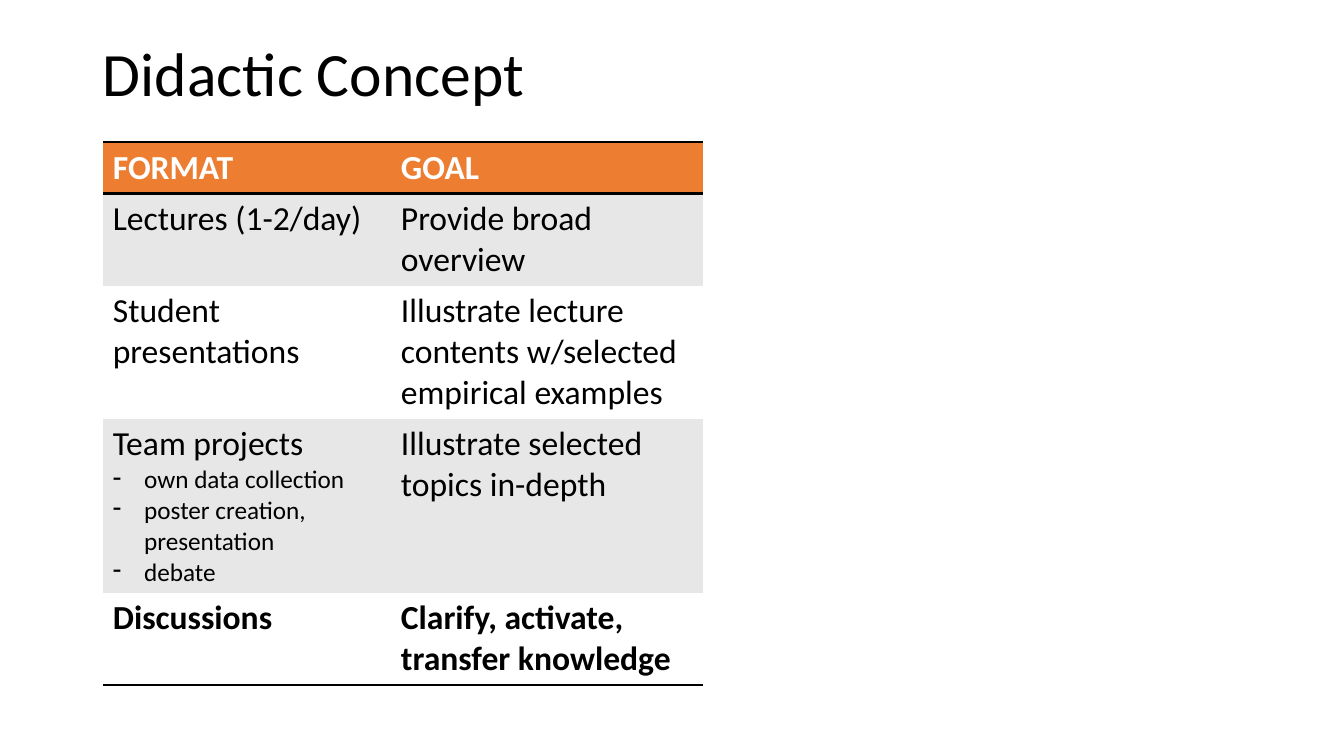
from dataclasses import dataclass

from lxml import etree
from pptx import Presentation
from pptx.dml.color import RGBColor
from pptx.enum.text import MSO_ANCHOR, MSO_AUTO_SIZE, PP_ALIGN
from pptx.oxml.ns import qn
from pptx.util import Cm, Pt

LEFT = PP_ALIGN.LEFT
MIDDLE = MSO_ANCHOR.MIDDLE
NO_AUTOFIT = MSO_AUTO_SIZE.NONE

BLACK = RGBColor(0x00, 0x00, 0x00)
WHITE = RGBColor(0xFF, 0xFF, 0xFF)
ORANGE = RGBColor(0xED, 0x7D, 0x31)
GREY = RGBColor(0xE7, 0xE7, 0xE7)

FONT_NAME = "Calibri"
RULE_WIDTH = Pt(2)
BULLET_INDENT = Cm(0.79)
COLUMN_WIDTHS = (Cm(7.26), Cm(7.87))


@dataclass
class FormatRow:
    teaching_format: str
    goal: str
    height: float
    details: tuple[str, ...] = ()
    bold: bool = False


ROWS = (
    FormatRow("FORMAT", "GOAL", 1.3, bold=True),
    FormatRow("Lectures (1-2/day)", "Provide broad\noverview", 2.32),
    FormatRow("Student presentations",
              "Illustrate lecture contents w/selected empirical examples", 3.35),
    FormatRow("Team projects", "Illustrate selected\ntopics in-depth", 4.38,
              details=("own data collection", "poster creation, presentation", "debate")),
    FormatRow("Discussions", "Clarify, activate,\ntransfer knowledge", 2.32, bold=True),
)


def write_text(paragraph, text: str, size: int, color: RGBColor, bold: bool = False) -> None:
    paragraph.text = text
    font_format = {"name": FONT_NAME, "size": Pt(size), "bold": bold}
    for run in paragraph.runs:
        for attribute, value in font_format.items():
            setattr(run.font, attribute, value)
        run.font.color.rgb = color


def add_dash(paragraph) -> None:
    properties = paragraph._p.get_or_add_pPr()
    properties.set("marL", str(BULLET_INDENT))
    properties.set("indent", str(-BULLET_INDENT))
    etree.SubElement(properties, qn("a:buChar")).set("char", "-")


def set_borders(cell, top: bool, bottom: bool) -> None:
    """Draw the chosen horizontal rules and clear the other edges."""
    properties = cell._tc.get_or_add_tcPr()
    edges = {"a:lnL": False, "a:lnR": False, "a:lnT": top, "a:lnB": bottom}
    for position, (tag, visible) in enumerate(edges.items()):
        line = etree.Element(qn(tag))
        if visible:
            line.set("w", str(RULE_WIDTH))
            fill = etree.SubElement(line, qn("a:solidFill"))
            etree.SubElement(fill, qn("a:srgbClr")).set("val", str(BLACK))
        else:
            etree.SubElement(line, qn("a:noFill"))
        properties.insert(position, line)


def add_title(slide, text: str) -> None:
    title = slide.shapes.title
    place = {"left": Cm(2.34), "top": Cm(0.08), "width": Cm(29.21), "height": Cm(3.68)}
    for attribute, value in place.items():
        setattr(title, attribute, value)
    frame = title.text_frame
    frame.auto_size = NO_AUTOFIT
    frame.vertical_anchor = MIDDLE
    paragraph = frame.paragraphs[0]
    paragraph.alignment = LEFT
    paragraph.line_spacing = 0.9
    write_text(paragraph, text, 44, BLACK)


def add_format_table(slide, rows: tuple[FormatRow, ...]) -> None:
    table = slide.shapes.add_table(
        len(rows), len(COLUMN_WIDTHS), Cm(2.59), Cm(3.58),
        sum(COLUMN_WIDTHS), Cm(sum(row.height for row in rows))).table
    table.horz_banding = False
    for column, width in zip(table.columns, COLUMN_WIDTHS):
        column.width = width

    last = len(rows) - 1
    for index, row in enumerate(rows):
        table.rows[index].height = Cm(row.height)
        header = index == 0
        fill = ORANGE if header else GREY if index % 2 else WHITE
        for column, text in enumerate((row.teaching_format, row.goal)):
            cell = table.cell(index, column)
            cell.fill.solid()
            cell.fill.fore_color.rgb = fill
            set_borders(cell, top=index in (0, 1), bottom=index in (0, last))
            write_text(cell.text_frame.paragraphs[0], text, 24,
                       WHITE if header else BLACK, row.bold)
        # Dashed details under the teaching format
        for detail in row.details:
            paragraph = table.cell(index, 0).text_frame.add_paragraph()
            write_text(paragraph, detail, 18, BLACK)
            add_dash(paragraph)


def main() -> None:
    presentation = Presentation()
    presentation.slide_width = Cm(33.87)
    presentation.slide_height = Cm(19.05)
    title_only = presentation.slide_layouts[5]
    slide = presentation.slides.add_slide(title_only)
    add_title(slide, "Didactic Concept")
    add_format_table(slide, ROWS)
    presentation.save("out.pptx")


if __name__ == "__main__":
    main()
